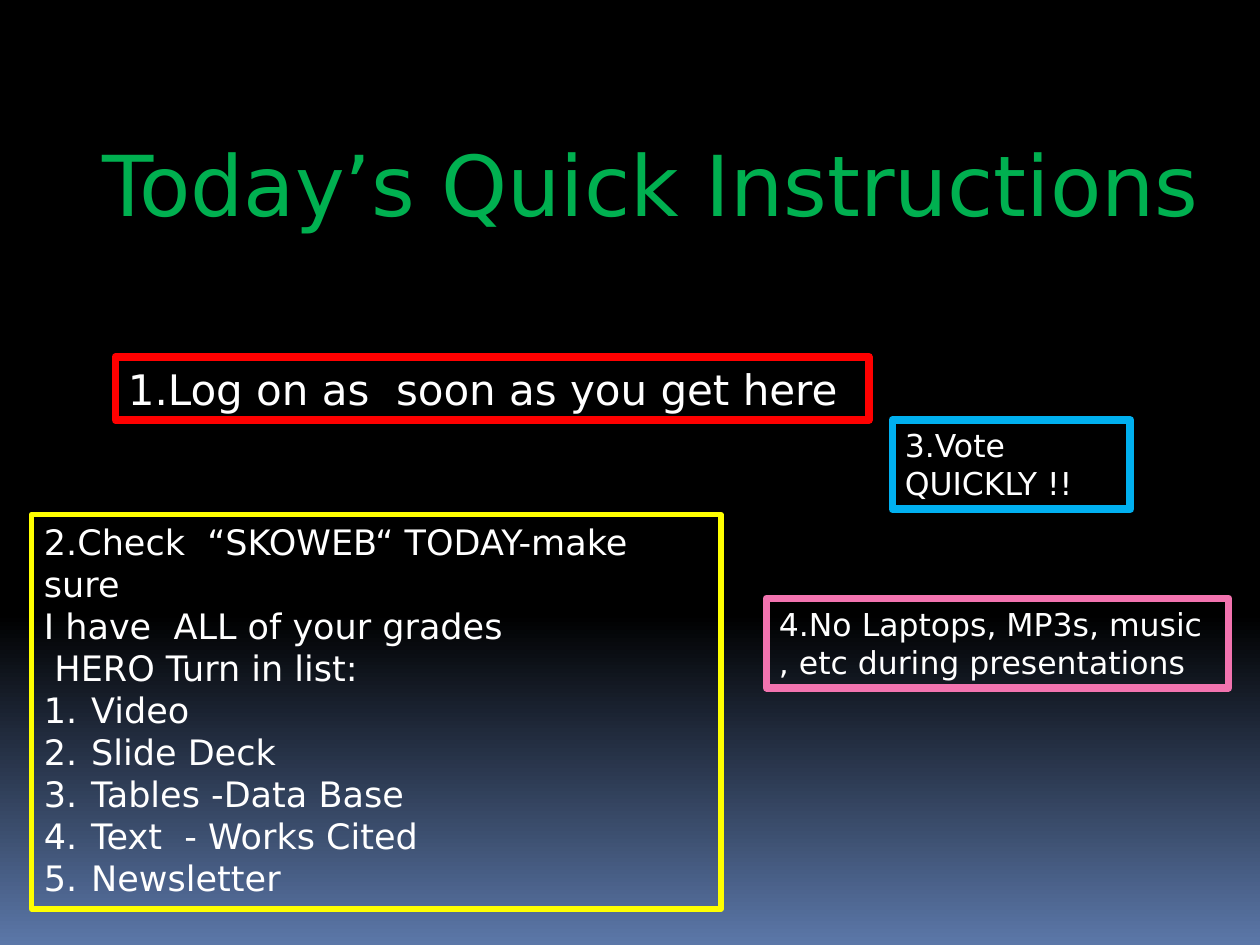
from lxml import etree
from pptx import Presentation
from pptx.dml.color import RGBColor
from pptx.enum.shapes import MSO_SHAPE
from pptx.enum.text import MSO_ANCHOR, MSO_AUTO_SIZE, PP_ALIGN
from pptx.oxml.ns import qn
from pptx.util import Pt

RECTANGLE = MSO_SHAPE.RECTANGLE
TOP = MSO_ANCHOR.TOP
FIT_SHAPE = MSO_AUTO_SIZE.SHAPE_TO_FIT_TEXT
LEFT, CENTER = PP_ALIGN.LEFT, PP_ALIGN.CENTER
FONT = "DejaVu Sans"
WHITE = "FFFFFF"
NUMBER_INDENT = 27
HEADING_INDENT = 6


def color(value):
    return RGBColor.from_string(value)


def paint_background(slide):
    fill = slide.background.fill
    fill.gradient()
    fill.gradient_angle = 270
    for stop, (position, shade) in zip(fill.gradient_stops,
                                       ((0.65, "000000"), (1, "5B77A8"))):
        stop.position = position
        stop.color.rgb = color(shade)


def write_lines(frame, lines, size, shade=WHITE, align=LEFT):
    for index, line in enumerate(lines):
        paragraph = frame.paragraphs[0] if index == 0 else frame.add_paragraph()
        paragraph.alignment = align
        run = paragraph.add_run()
        run.text = line
        run.font.name = FONT
        run.font.size = Pt(size)
        run.font.color.rgb = color(shade)


def indent(paragraph, left, first=0):
    properties = paragraph._p.get_or_add_pPr()
    properties.set("marL", str(Pt(left)))
    properties.set("indent", str(Pt(first)))
    return properties


def number(paragraph):
    properties = indent(paragraph, NUMBER_INDENT, -NUMBER_INDENT)
    etree.SubElement(properties, qn("a:buFont"), typeface="+mj-lt")
    etree.SubElement(properties, qn("a:buAutoNum"), type="arabicPeriod")


def add_title(slide, box):
    title = slide.shapes.add_textbox(*map(Pt, box))
    frame = title.text_frame
    frame.word_wrap = False
    frame.auto_size = FIT_SHAPE
    write_lines(frame, ["Today’s Quick Instructions"], 48, "00B050", CENTER)


def add_instruction(slide, box, border, width, lines, size, wrap=True):
    instruction = slide.shapes.add_shape(RECTANGLE, *map(Pt, box))
    instruction.shadow.inherit = False
    instruction.fill.background()
    instruction.line.color.rgb = color(border)
    instruction.line.width = Pt(width)
    frame = instruction.text_frame
    frame.word_wrap = wrap
    frame.auto_size = FIT_SHAPE
    frame.vertical_anchor = TOP
    write_lines(frame, lines, size)
    return frame


def add_checklist(slide, box):
    intro = ["2.Check  “SKOWEB“ TODAY-make sure",
             "I have  ALL of your grades",
             "HERO Turn in list:"]
    assignments = ["Video", "Slide Deck", "Tables -Data Base",
                   "Text  - Works Cited", "Newsletter"]
    frame = add_instruction(slide, box, "FFFF00", 3, intro + assignments, 20)
    indent(frame.paragraphs[len(intro) - 1], HEADING_INDENT)
    for paragraph in frame.paragraphs[len(intro):]:
        number(paragraph)


def main():
    presentation = Presentation()
    presentation.slide_width, presentation.slide_height = Pt(720), Pt(540)
    slide = presentation.slides.add_slide(presentation.slide_layouts[6])

    paint_background(slide)
    add_title(slide, (46, 72, 652, 65.5))
    # Log on
    add_instruction(slide, (66, 204, 430.5, 36), "FF0000", 4.5,
                    ["1.Log on as  soon as you get here"], 24, wrap=False)
    # Grades and turn-in list
    add_checklist(slide, (18, 294, 394, 225.5))
    # Vote
    add_instruction(slide, (510, 240, 136, 51), "00B0F0", 4.5,
                    ["3.Vote QUICKLY !!"], 18)
    # Rules during presentations
    add_instruction(slide, (438, 342, 264, 51), "F273AF", 4.5,
                    ["4.No Laptops, MP3s, music",
                     ", etc during presentations"], 18, wrap=False)

    presentation.save("out.pptx")


if __name__ == "__main__":
    main()
